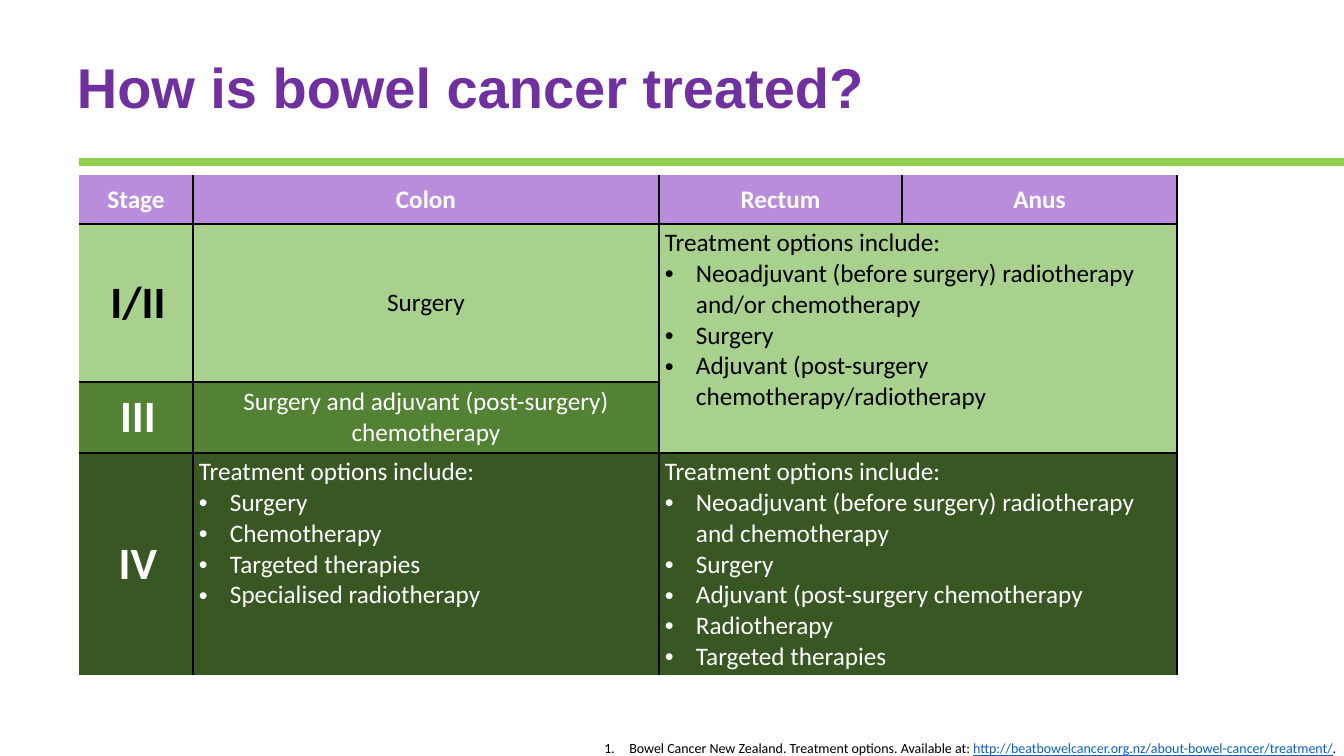
"""Build the slide on how bowel cancer is treated at each stage."""
from lxml.etree import SubElement
from pptx import Presentation
from pptx.dml.color import RGBColor
from pptx.enum.shapes import MSO_CONNECTOR
from pptx.enum.text import MSO_ANCHOR, PP_ALIGN
from pptx.oxml.ns import qn
from pptx.util import Emu, Pt

PX = 914400 / 100.8
BLACK, WHITE = "000000", "FFFFFF"
LILAC, PALE, MID, DARK = "BA8CDC", "A9D18E", "548235", "385723"


def rgb(value):
    return RGBColor.from_string(value)


def write(paragraph, text, size=18, color=BLACK, bold=False, font="Calibri",
          align=PP_ALIGN.LEFT, underline=False, indent=0, bullet=None):
    paragraph.alignment = align
    if bullet:
        props = paragraph._p.get_or_add_pPr()
        props.set("marL", str(int(indent * PX)))
        props.set("indent", str(int(-indent * PX)))
        if bullet == "1.":
            SubElement(props, qn("a:buAutoNum"), type="arabicPeriod")
        else:
            SubElement(props, qn("a:buFont"), typeface="Arial")
            SubElement(props, qn("a:buChar"), char=bullet)
    run = paragraph.add_run()
    run.text = text
    run.font.size, run.font.name = Pt(size), font
    run.font.bold, run.font.underline = bold, underline
    run.font.color.rgb = rgb(color)


deck = Presentation()
deck.slide_width, deck.slide_height = Emu(int(1344 * PX)), Emu(int(756 * PX))
slide = deck.slides.add_slide(deck.slide_layouts[6])

rule_ends = [Emu(int(v * PX)) for v in (79, 162, 1344, 162)]
rule = slide.shapes.add_connector(MSO_CONNECTOR.STRAIGHT, *rule_ends)
rule.line.color.rgb, rule.line.width = rgb("92D050"), Pt(5.5)
SubElement(rule._element.spPr, qn("a:effectLst"))

title = slide.shapes.add_textbox(*[Emu(int(v * PX)) for v in (67, 55, 1159, 124)])
title.text_frame.word_wrap = True
heading = title.text_frame.paragraphs[0]
heading.line_spacing = 0.9
write(heading, "How is bowel cancer treated?", size=40, color="7030A0", bold=True, font="Arial")

source = slide.shapes.add_textbox(*[Emu(int(v * PX)) for v in (302, 735, 1044, 27)])
source.text_frame.word_wrap = True
source.fill.solid()
source.fill.fore_color.rgb = rgb(WHITE)
SubElement(source._element.spPr.find(".//" + qn("a:srgbClr")), qn("a:alpha"), val="50000")
citation = source.text_frame.paragraphs[0]
write(citation, "Bowel Cancer New Zealand. Treatment options. Available at: ",
      size=10, align=PP_ALIGN.RIGHT, indent=25, bullet="1.")
write(citation, "http://beatbowelcancer.org.nz/about-bowel-cancer/treatment/",
      size=10, align=PP_ALIGN.RIGHT, color="0563C1", underline=True)
write(citation, ".", size=10, align=PP_ALIGN.RIGHT)

column_widths, row_heights = [114, 466, 243, 275], [49, 158, 71, 222]
table_box = [Emu(int(v * PX)) for v in (79, 175, sum(column_widths), sum(row_heights))]
treatments = slide.shapes.add_table(4, 4, *table_box).table
treatments.first_row = treatments.horz_banding = False
treatments._tbl.tblPr.find(qn("a:tableStyleId")).text = "{2D5ABB26-0587-4C30-8999-92F81FD0307C}"
for column, width in zip(treatments.columns, column_widths):
    column.width = Emu(int(width * PX))
for row, height in zip(treatments.rows, row_heights):
    row.height = Emu(int(height * PX))
treatments.cell(1, 2).merge(treatments.cell(2, 3))
treatments.cell(3, 2).merge(treatments.cell(3, 3))

OPTIONS = "Treatment options include:"
contents = [
    [["Stage"], ["Colon"], ["Rectum"], ["Anus"]],
    [["I/II"], ["Surgery"],
     [OPTIONS, "Neoadjuvant (before surgery) radiotherapy and/or chemotherapy", "Surgery",
      "Adjuvant (post-surgery chemotherapy/radiotherapy"]],
    [["III"], ["Surgery and adjuvant (post-surgery) chemotherapy"]],
    [["IV"],
     [OPTIONS, "Surgery", "Chemotherapy", "Targeted therapies", "Specialised radiotherapy"],
     [OPTIONS, "Neoadjuvant (before surgery) radiotherapy and chemotherapy", "Surgery",
      "Adjuvant (post-surgery chemotherapy", "Radiotherapy", "Targeted therapies"]],
]
row_fills = [LILAC, PALE, MID, DARK]
row_inks = [WHITE, BLACK, WHITE, WHITE]
upright_weights, level_weights = [0, 2.25, 2.25, 2.25, 2.25], [0, 2.25, 1, 1, 0]

for r, row_contents in enumerate(contents):
    for c, lines in enumerate(row_contents):
        cell = treatments.cell(r, c)
        right = c + (cell.span_width if cell.is_merge_origin else 1)
        bottom = r + (cell.span_height if cell.is_merge_origin else 1)
        props = cell._tc.get_or_add_tcPr()
        for side, weight in (("L", upright_weights[c]), ("R", upright_weights[right]),
                             ("T", level_weights[r]), ("B", level_weights[bottom])):
            if weight:
                border = SubElement(props, qn("a:ln" + side), w=str(Pt(weight)))
                SubElement(SubElement(border, qn("a:solidFill")), qn("a:srgbClr"), val=BLACK)
        cell.fill.solid()
        cell.fill.fore_color.rgb = rgb(row_fills[r])
        cell.margin_left = Emu(int((6 if c and r else 10) * PX))
        cell.margin_right = Emu(int((6 if r else 10) * PX))
        cell.margin_top = cell.margin_bottom = Emu(int(4 * PX))
        is_list = len(lines) > 1
        cell.vertical_anchor = MSO_ANCHOR.TOP if is_list else MSO_ANCHOR.MIDDLE
        for i, line in enumerate(lines):
            paragraph = cell.text_frame.add_paragraph() if i else cell.text_frame.paragraphs[0]
            write(paragraph, line, size=32 if r and c == 0 else 18, color=row_inks[r],
                  bold=r == 0 or c == 0, align=PP_ALIGN.LEFT if is_list else PP_ALIGN.CENTER,
                  indent=31, bullet="•" if i else None)

deck.save("out.pptx")
